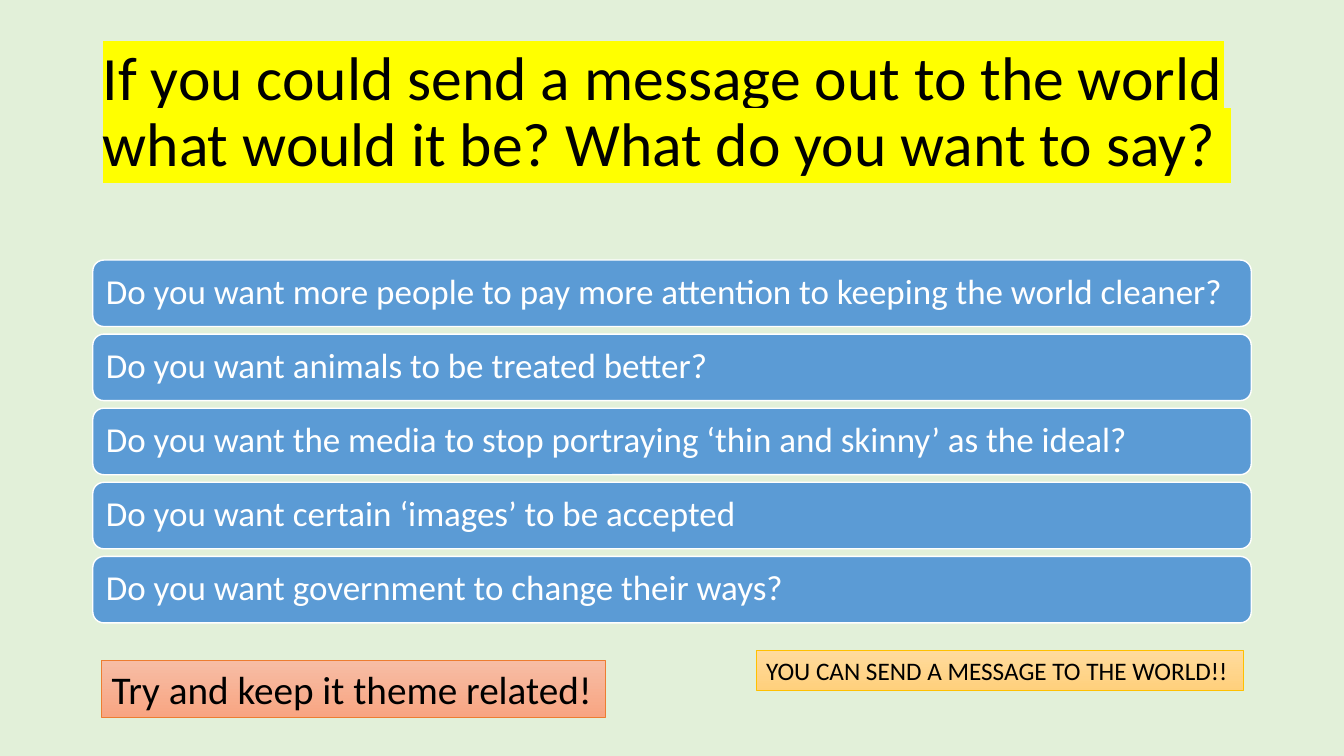
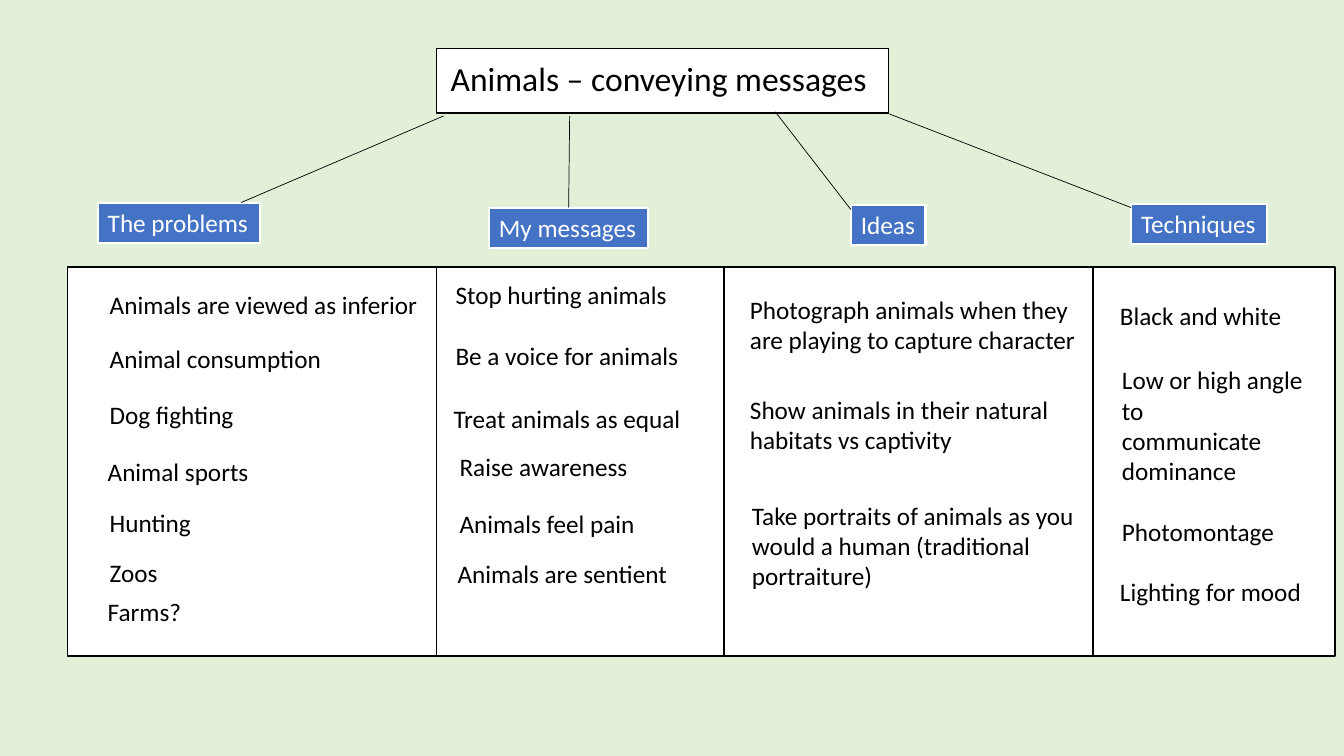
from itertools import pairwise

from lxml import etree
from pptx import Presentation
from pptx.dml.color import RGBColor
from pptx.enum.shapes import MSO_CONNECTOR as Connector, MSO_SHAPE as Preset
from pptx.enum.text import MSO_ANCHOR as Anchor, PP_ALIGN as Align
from pptx.oxml.ns import qn
from pptx.util import Inches, Pt

FONT = "Calibri"
BACKGROUND, BLACK, WHITE = "E2F0D9", "000000", "FFFFFF"
BAR_BLUE, TAG_BLUE, YELLOW = "5B9BD5", "4472C4", "FFFF00"
GOLD, GOLD_LINE = ("FFDB9E", "FFD07C"), "FFC000"
CORAL, CORAL_LINE = ("F7BDA5", "F8A582"), "ED7D31"

SLIDE_WIDTH, SLIDE_HEIGHT = 13.33, 7.5
MARGIN = 0.92
CONTENT_WIDTH = SLIDE_WIDTH - 2 * MARGIN

BAR_TOP, BAR_HEIGHT, BAR_GAP = 2.58, 0.66, 0.075
QUESTIONS = [
    "Do you want more people to pay more attention to keeping the world cleaner?",
    "Do you want animals to be treated better?",
    "Do you want the media to stop portraying ‘thin and skinny’ as the ideal?",
    "Do you want certain ‘images’ to be accepted",
    "Do you want government to change their ways?",
]

PANEL_TOP, PANEL_HEIGHT = 2.65, 3.86
PANEL_EDGES = [0.67, 4.33, 7.18, 10.84, 13.24]
LINE_HEIGHT, TAG_HEIGHT = 0.3, 0.4
# Each branch: tag (left, top, width, text), note width, notes (left, top, text, lines).
BRANCHES = [
    ((0.97, 2.01, 1.61, "The problems"), 3.4, [
        (0.99, 2.82, "Animals are viewed as inferior"),
        (0.99, 3.36, "Animal consumption"),
        (0.99, 3.91, "Dog fighting"),
        (0.97, 4.48, "Animal sports"),
        (0.99, 4.98, "Hunting"),
        (0.99, 5.48, "Zoos"),
        (0.97, 5.87, "Farms?"),
    ]),
    ((4.85, 2.06, 1.58, "My messages"), 2.6, [
        (4.42, 2.72, "Stop hurting animals"),
        (4.42, 3.33, "Be a voice for animals"),
        (4.4, 3.95, "Treat animals as equal"),
        (4.46, 4.43, "Raise awareness"),
        (4.46, 4.99, "Animals feel pain"),
        (4.44, 5.49, "Animals are sentient"),
    ]),
    ((8.44, 2.03, 0.74, "Ideas"), 3.5, [
        (7.34, 2.87, "Photograph animals when they\nare playing to capture character", 2),
        (7.34, 3.86, "Show animals in their natural\nhabitats vs captivity", 2),
        (7.36, 4.91, "Take portraits of animals as you\n"
                     "would a human (traditional portraiture)", 3),
    ]),
    ((11.22, 2.02, 1.35, "Techniques"), 2.1, [
        (11.01, 2.93, "Black and white"),
        (11.03, 3.57, "Low or high angle to\ncommunicate\ndominance", 4),
        (11.03, 5.07, "Photomontage"),
        (11.01, 5.67, "Lighting for mood"),
    ]),
]


def rgb(color):
    return RGBColor.from_string(color)


def add_slide(presentation):
    slide = presentation.slides.add_slide(presentation.slide_layouts[6])
    slide.background.fill.solid()
    slide.background.fill.fore_color.rgb = rgb(BACKGROUND)
    return slide


def write(shape, text, size, color=BLACK, anchor=Anchor.TOP, align=Align.LEFT,
          spacing=1.0, wrap=True):
    frame = shape.text_frame
    frame.text = text
    frame.word_wrap = wrap
    frame.vertical_anchor = anchor
    for paragraph in frame.paragraphs:
        paragraph.alignment = align
        paragraph.line_spacing = spacing
        for run in paragraph.runs:
            run.font.name = FONT
            run.font.size = Pt(size)
            run.font.color.rgb = rgb(color)


def highlight(shape, color):
    for paragraph in shape.text_frame.paragraphs:
        for run in paragraph.runs:
            mark = etree.Element(qn("a:highlight"))
            etree.SubElement(mark, qn("a:srgbClr"), val=color)
            run.font.color.rgb = run.font.color.rgb
            run._r.get_or_add_rPr().find(qn("a:solidFill")).addnext(mark)


def add_text(slide, left, top, width, height, text, size, **style):
    box = slide.shapes.add_textbox(*map(Inches, (left, top, width, height)))
    write(box, text, size, **style)
    return box


def add_box(slide, left, top, width, height, fill, line, line_width,
            preset=Preset.RECTANGLE):
    """Add a shape; a pair of colours as fill gives a top-to-bottom gradient."""
    shape = slide.shapes.add_shape(preset, *map(Inches, (left, top, width, height)))
    shape.shadow.inherit = False
    if isinstance(fill, tuple):
        shape.fill.gradient()
        shape.fill.gradient_angle = 270
        for stop, color in zip(shape.fill.gradient_stops, fill):
            stop.color.rgb = rgb(color)
    else:
        shape.fill.solid()
        shape.fill.fore_color.rgb = rgb(fill)
    shape.line.color.rgb = rgb(line)
    shape.line.width = Pt(line_width)
    return shape


def add_bar(slide, row, text):
    top = BAR_TOP + row * (BAR_HEIGHT + BAR_GAP)
    bar = add_box(slide, MARGIN, top, CONTENT_WIDTH, BAR_HEIGHT, BAR_BLUE, WHITE, 1,
                  Preset.ROUNDED_RECTANGLE)
    write(bar, text, 25, WHITE, Anchor.MIDDLE, spacing=0.9)
    bar.text_frame.margin_left = Inches(0.1)


def add_tag(slide, left, top, width, text):
    tag = add_box(slide, left, top, width, TAG_HEIGHT, TAG_BLUE, WHITE, 1.5)
    write(tag, text, 18, WHITE, wrap=False)
    return tag


def add_note(slide, width, left, top, text, lines=1):
    add_text(slide, left, top, width, 0.1 + lines * LINE_HEIGHT, text, 18)


def add_line(slide, start, end):
    line = slide.shapes.add_connector(Connector.STRAIGHT, *map(Inches, (*start, *end)))
    line.line.color.rgb = rgb(BLACK)
    line.line.width = Pt(0.5)
    etree.SubElement(line._element.spPr, qn("a:effectLst"))
    return line


def build_questions(presentation):
    slide = add_slide(presentation)
    title = add_text(
        slide, MARGIN, 0.4, CONTENT_WIDTH, 1.45,
        "If you could send a message out to the world what would it be? "
        "What do you want to say? ",
        44, anchor=Anchor.MIDDLE, spacing=0.9)
    highlight(title, YELLOW)
    for row, question in enumerate(QUESTIONS):
        add_bar(slide, row, question)
    slogan = add_box(slide, 7.5, 6.45, 4.83, 0.4, GOLD, GOLD_LINE, 0.5)
    write(slogan, "YOU CAN SEND A MESSAGE TO THE WORLD!!", 18, wrap=False)
    reminder = add_box(slide, 1.01, 6.55, 4.99, 0.57, CORAL, CORAL_LINE, 0.5)
    write(reminder, "Try and keep it theme related!", 28)


def build_mind_map(presentation):
    slide = add_slide(presentation)
    for left, right in pairwise(PANEL_EDGES):
        add_box(slide, left, PANEL_TOP, right - left, PANEL_HEIGHT, WHITE, BLACK, 1)
    title = add_box(slide, 4.33, 0.48, 4.48, 0.64, WHITE, BLACK, 1)
    write(title, "Animals – conveying messages ", 24, anchor=Anchor.MIDDLE,
          align=Align.CENTER, spacing=0.9)

    tags = []
    for tag, note_width, notes in BRANCHES:
        tags.append(add_tag(slide, *tag))
        for note in notes:
            add_note(slide, note_width, *note)

    add_line(slide, (4.4, 1.15), (2.39, 2.01))
    add_line(slide, (5.65, 1.15), (5.64, 2.06)).end_connect(tags[1], 0)
    add_line(slide, (7.69, 1.11), (8.44, 2.08))
    add_line(slide, (8.82, 1.13), (11.22, 2.06))


def main():
    presentation = Presentation()
    presentation.slide_width = Inches(SLIDE_WIDTH)
    presentation.slide_height = Inches(SLIDE_HEIGHT)
    build_questions(presentation)
    build_mind_map(presentation)
    presentation.save("out.pptx")


if __name__ == "__main__":
    main()
